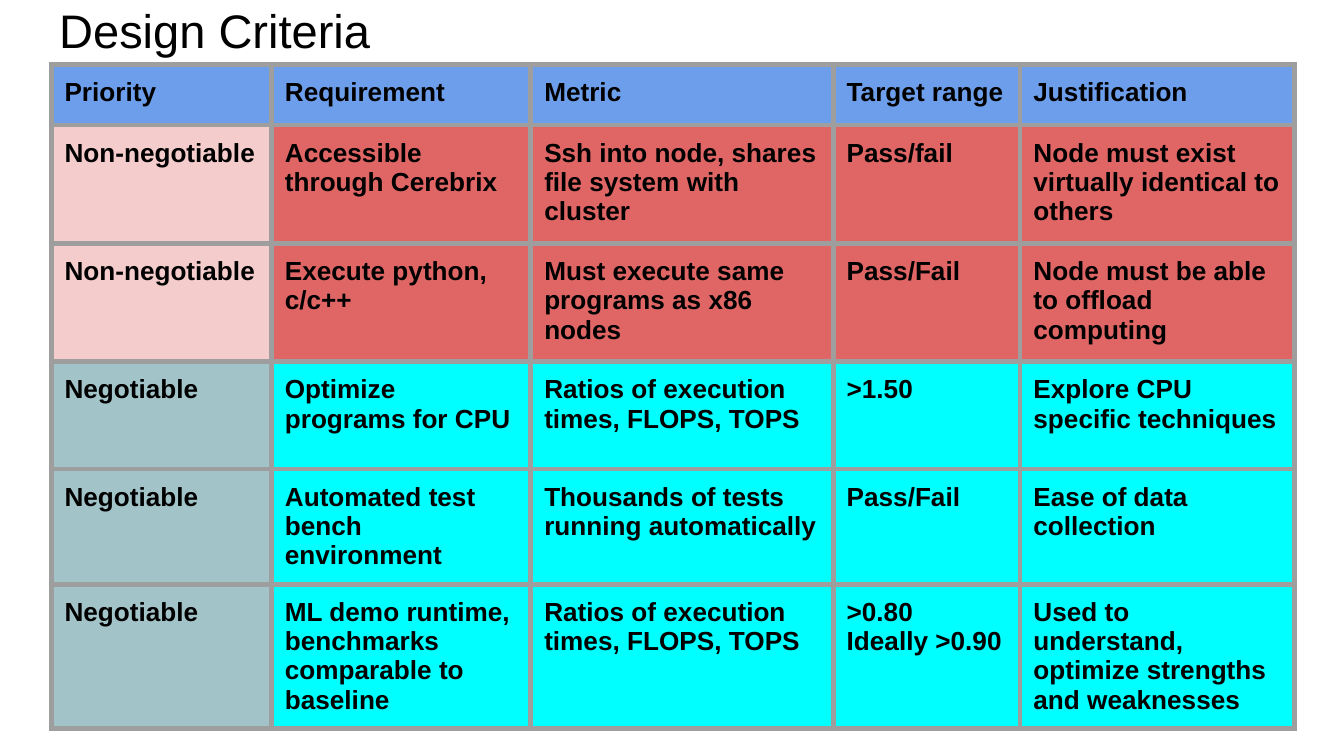
from lxml import etree
from pptx import Presentation
from pptx.dml.color import RGBColor
from pptx.enum.text import MSO_ANCHOR, MSO_AUTO_SIZE, PP_ALIGN
from pptx.oxml.ns import qn
from pptx.util import Inches, Pt

TOP, LEFT, NO_FIT = MSO_ANCHOR.TOP, PP_ALIGN.LEFT, MSO_AUTO_SIZE.NONE
TITLE_ONLY = 5
BLACK, GRAY = "000000", "9E9E9E"
HEADER = ("6D9EEB", "6D9EEB")
REQUIRED = ("F4CCCC", "E06666")
OPTIONAL = ("A2C4C9", "00FFFF")
MARGINS = {f"margin_{side}": Inches(0.1) for side in ("left", "right", "top", "bottom")}


def color(value):
    return RGBColor.from_string(value)


def format_text(frame, size, bold):
    for para in frame.paragraphs:
        para.alignment = LEFT
        for span in para.runs:
            for name, value in {"name": "Arial", "size": Pt(size), "bold": bold}.items():
                setattr(span.font, name, value)
            span.font.color.rgb = color(BLACK)


deck = Presentation()
deck.slide_width, deck.slide_height = Inches(10), Inches(10 * 9 / 16)
page = deck.slides.add_slide(deck.slide_layouts[TITLE_ONLY])

title = page.shapes.title
title.left, title.top = Inches(0.34), Inches(-0.09)
title.width, title.height = Inches(9.32), Inches(0.63)
title.text_frame.text = "Design Criteria"
title_format = {"vertical_anchor": TOP, "auto_size": NO_FIT, "word_wrap": True, **MARGINS}
for name, value in title_format.items():
    setattr(title.text_frame, name, value)
format_text(title.text_frame, 25.2, False)

column_widths = [1.64, 1.93, 2.25, 1.39, 2.04]
criteria = [
    (0.45, HEADER, ["Priority", "Requirement", "Metric", "Target range", "Justification"]),
    (0.88, REQUIRED, ["Non-negotiable", "Accessible through Cerebrix",
                      "Ssh into node, shares file system with cluster", "Pass/fail",
                      "Node must exist virtually identical to others"]),
    (0.88, REQUIRED, ["Non-negotiable", "Execute python, c/c++",
                      "Must execute same programs as x86 nodes", "Pass/Fail",
                      "Node must be able to offload computing"]),
    (0.8, OPTIONAL, ["Negotiable", "Optimize programs for CPU",
                     "Ratios of execution times, FLOPS, TOPS", ">1.50",
                     "Explore CPU specific techniques"]),
    (0.65, OPTIONAL, ["Negotiable", "Automated test bench environment",
                      "Thousands of tests running automatically", "Pass/Fail",
                      "Ease of data collection"]),
    (0.8, OPTIONAL, ["Negotiable", "ML demo runtime, benchmarks comparable to baseline",
                     "Ratios of execution times, FLOPS, TOPS", ">0.80\nIdeally >0.90",
                     "Used to understand, optimize strengths and weaknesses"]),
]

table = page.shapes.add_table(
    len(criteria), len(column_widths), Inches(0.38), Inches(0.48),
    Inches(sum(column_widths)), Inches(sum(height for height, _, _ in criteria)),
).table
table.first_row = table.horz_banding = False
for column, width in zip(table.columns, column_widths):
    column.width = Inches(width)

for row, (height, (priority_fill, detail_fill), texts) in zip(table.rows, criteria):
    row.height = Inches(height)
    for index, (cell, text) in enumerate(zip(row.cells, texts)):
        cell.text = text
        for name, value in {"vertical_anchor": TOP, **MARGINS}.items():
            setattr(cell, name, value)
        format_text(cell.text_frame, 14, True)
        properties = cell._tc.get_or_add_tcPr()
        for edge in ("a:lnL", "a:lnR", "a:lnT", "a:lnB"):
            border = etree.SubElement(properties, qn(edge), w=str(Pt(3)))
            border_fill = etree.SubElement(border, qn("a:solidFill"))
            etree.SubElement(border_fill, qn("a:srgbClr"), val=GRAY)
        cell.fill.solid()
        cell.fill.fore_color.rgb = color(detail_fill if index else priority_fill)

deck.save("out.pptx")
